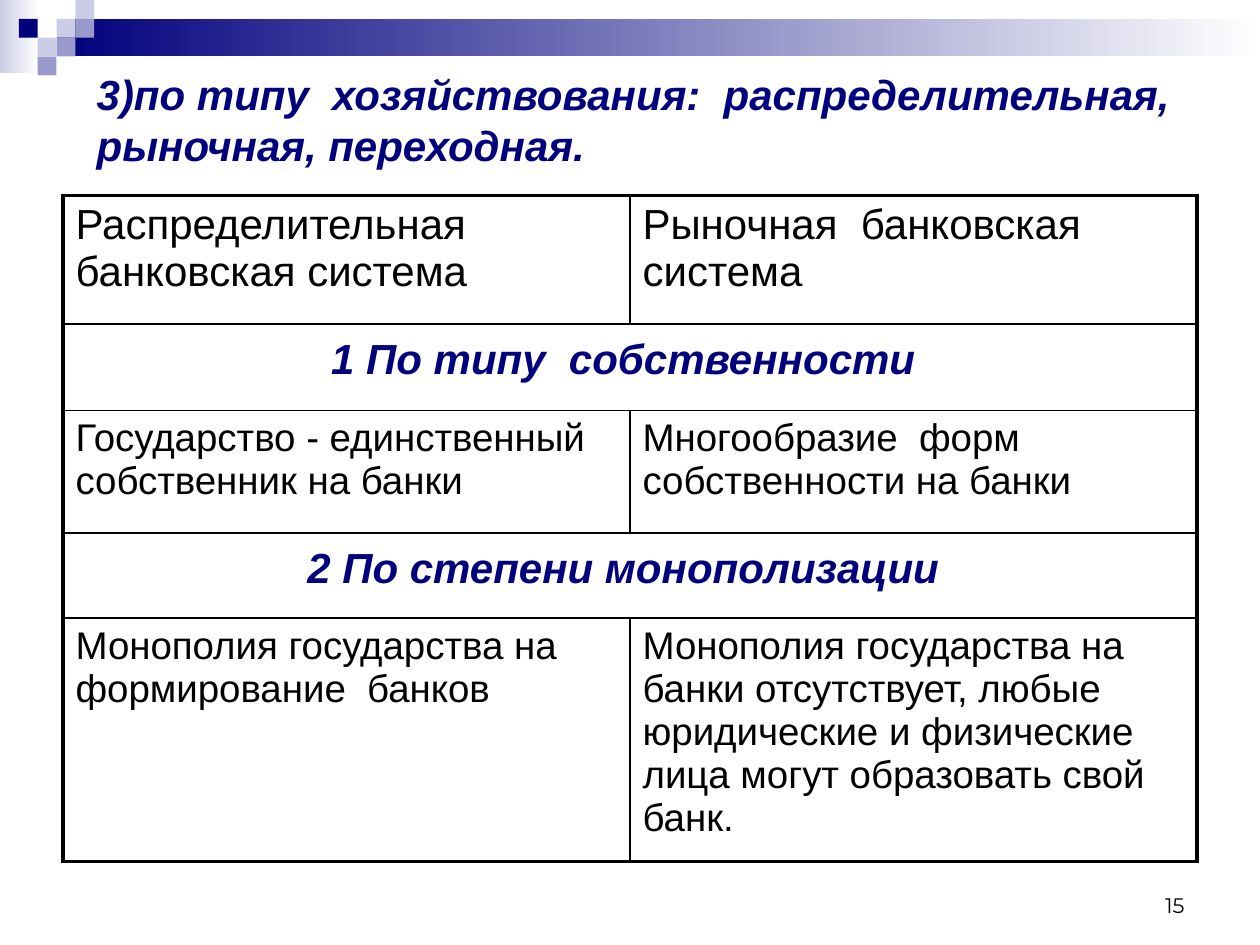
from lxml import etree
from pptx import Presentation
from pptx.dml.color import RGBColor
from pptx.enum import shapes, text
from pptx.oxml import ns
from pptx.util import Cm, Pt

COLORS = {"navy": "00007D", "lilac": "CCCCE6", "violet": "9999CC",
          "white": "FFFFFF", "black": "000000"}
ROWS = [
    (2.59, 24, ["Распределительная банковская система",
                "Рыночная  банковская система"]),
    (1.75, 24, ["1 По типу  собственности"]),
    (2.46, 22, ["Государство - единственный собственник на банки",
                "Многообразие  форм собственности на банки"]),
    (1.72, 24, ["2 По степени монополизации"]),
    (4.17, 22, ["Монополия государства на формирование  банков",
                "Монополия государства на банки отсутствует, любые юридические "
                "и физические лица могут образовать свой банк."]),
]


def rgb(name):
    """Return the named colour."""
    return RGBColor.from_string(COLORS[name])


def style(font, size, color="black", strong=False, name="Arial"):
    """Set the look of a font; strong means bold italic."""
    font.name, font.size = name, Pt(size)
    font.bold = font.italic = strong
    font.color.rgb = rgb(color)


def add_rect(s, x, y, w, h, color, fade=False):
    """Add a borderless rectangle, optionally fading to white."""
    sp = s.shapes.add_shape(shapes.MSO_SHAPE.RECTANGLE, Cm(x), Cm(y), Cm(w), Cm(h))
    sp.shadow.inherit = False
    sp.line.fill.background()
    if fade:
        sp.fill.gradient()
        sp.fill.gradient_angle = 0
        for stop, shade, at in zip(sp.fill.gradient_stops, (color, "white"), (0, 1)):
            stop.color.rgb, stop.position = rgb(shade), at
    else:
        sp.fill.solid()
        sp.fill.fore_color.rgb = rgb(color)


def add_banner(s, x, y, w, unit):
    """Draw the fading bar and the mosaic of squares on a unit grid."""
    add_rect(s, x, y, 0.79, 1.47, "lilac", True)
    add_rect(s, x + 3 * unit, y + unit, w - 3 * unit, 2 * unit, "navy", True)
    mosaic = [(3, 1, "lilac"), (4, 0, "lilac"), (4, 1, "violet"), (2, 2, "lilac"),
              (1, 1, "navy"), (3, 2, "violet"), (2, 3, "violet")]
    for col, row, color in mosaic:
        add_rect(s, x + col * unit, y + row * unit, unit, unit, color)


def add_text(s, x, y, w, h, words, anchor, align):
    """Add a wrapped text box and return its paragraph."""
    tf = s.shapes.add_textbox(Cm(x), Cm(y), Cm(w), Cm(h)).text_frame
    tf.word_wrap, tf.vertical_anchor = True, anchor
    p = tf.paragraphs[0]
    p.text, p.alignment = words, align
    return p


def add_title(s, x, y, w, h):
    """Place the slide heading."""
    p = add_text(s, x, y, w, h,
                 "3)по типу  хозяйствования:  распределительная, рыночная, переходная.",
                 text.MSO_ANCHOR.MIDDLE, text.PP_ALIGN.LEFT)
    style(p.font, 24, "navy", True)


def add_page_number(s, x, y, w, h):
    """Place the page number."""
    p = add_text(s, x, y, w, h, "15", text.MSO_ANCHOR.BOTTOM, text.PP_ALIGN.RIGHT)
    style(p.font, 12, name="Montserrat")


def set_borders(cell, **widths):
    """Draw black cell borders of the given widths in points."""
    tcPr = cell._tc.get_or_add_tcPr()
    for i, (side, width) in enumerate(widths.items()):
        ln = etree.Element(ns.qn(f"a:ln{side}"), w=str(Pt(width)))
        fill = etree.SubElement(ln, ns.qn("a:solidFill"))
        etree.SubElement(fill, ns.qn("a:srgbClr"), val=COLORS["black"])
        tcPr.insert(i, ln)


def add_table(s, x, y, w):
    """Build the comparison table; one-item rows span it as headings."""
    height = sum(row[0] for row in ROWS)
    table = s.shapes.add_table(len(ROWS), 2, Cm(x), Cm(y), Cm(w), Cm(height)).table
    table.first_row = table.horz_banding = False
    for col in table.columns:
        col.width = Cm(w / 2)
    thin, thick = 1, 2.25
    for i, (h, size, words) in enumerate(ROWS):
        table.rows[i].height = Cm(h)
        heading = len(words) == 1
        if heading:
            table.cell(i, 0).merge(table.cell(i, 1))
        for j in range(2):
            cell = table.cell(i, j)
            cell.fill.background()
            set_borders(cell, L=thin if j else thick,
                        R=thick if j or heading else thin,
                        T=thin if i else thick,
                        B=thick if i == len(ROWS) - 1 else thin)
        for j, line in enumerate(words):
            p = table.cell(i, j).text_frame.paragraphs[0]
            r = p.add_run()
            r.text = line
            style(r.font, size, "navy" if heading else "black", heading)
            if heading:
                p.alignment = text.PP_ALIGN.CENTER
                r = p.add_run()
                r.text = " "
                style(r.font, 28)


def main():
    """Build and save the slide."""
    prs = Presentation()
    prs.slide_width, prs.slide_height = Cm(25.4), Cm(19.05)
    s = prs.slides.add_slide(prs.slide_layouts[6])
    add_banner(s, 0, 0, 25.4, 0.38)
    add_page_number(s, 18.2, 17.35, 5.93, 1.27)
    add_title(s, 1.7, 1.27, 22.43, 2.26)
    add_table(s, 1.27, 3.94, 22.86)
    prs.save("out.pptx")


if __name__ == "__main__":
    main()
